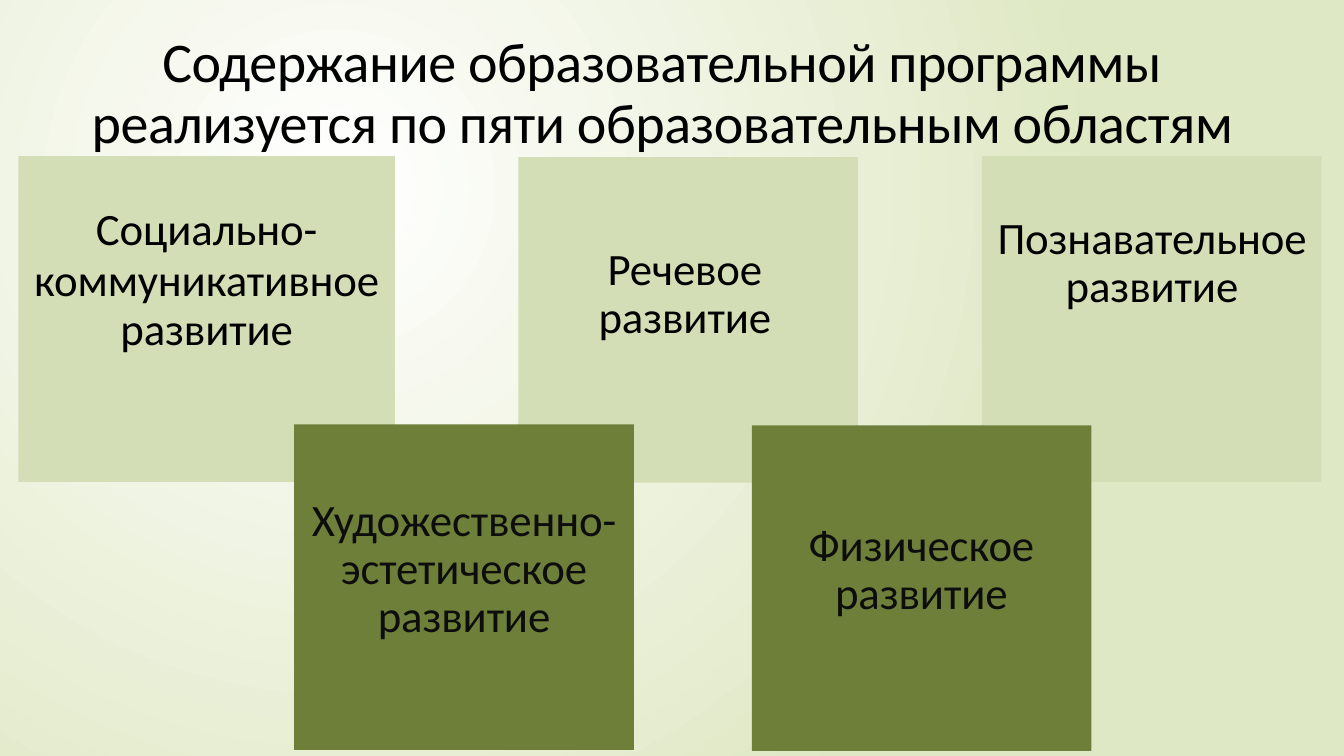
from lxml.etree import SubElement
from pptx import Presentation
from pptx.dml.color import RGBColor
from pptx.enum.shapes import MSO_SHAPE
from pptx.enum.text import MSO_ANCHOR, PP_ALIGN
from pptx.oxml.ns import qn
from pptx.util import Pt

WHITE = RGBColor(0xFF, 0xFF, 0xFF)
PALE_GREEN = RGBColor(0xDF, 0xE8, 0xC4)
LIGHT_GREEN = RGBColor(0xD4, 0xDE, 0xB6)
DARK_GREEN = RGBColor(0x6D, 0x7F, 0x39)
BLACK = RGBColor(0x00, 0x00, 0x00)
NEAR_BLACK = RGBColor(0x0D, 0x0D, 0x0D)


def prepare_frame(frame, top_inset):
    frame.word_wrap = True
    frame.vertical_anchor = MSO_ANCHOR.TOP
    frame.margin_left = frame.margin_right = frame.margin_bottom = 0
    frame.margin_top = Pt(top_inset)


def format_paragraph(paragraph, size, color, line, before, tracking):
    paragraph.line_spacing = Pt(line)
    paragraph.space_before = Pt(before)
    for run in paragraph.runs:
        run.font.name = "Calibri"
        run.font.size = Pt(size)
        run.font.bold = False
        run.font.color.rgb = color
        run._r.get_or_add_rPr().set("spc", str(tracking))


prs = Presentation()
prs.slide_width = Pt(960)
prs.slide_height = Pt(540)
slide = prs.slides.add_slide(prs.slide_layouts[5])

# Background: circular glow from the upper left
background = slide.background.fill
background.gradient()
for stop, color, position in zip(background.gradient_stops, (WHITE, PALE_GREEN), (0, 1)):
    stop.color.rgb = color
    stop.position = position
gradient = slide.background._cSld.find(".//" + qn("a:gradFill"))
gradient.remove(gradient.find(qn("a:lin")))
glow = SubElement(gradient, qn("a:path"), {"path": "circle"})
SubElement(glow, qn("a:fillToRect"),
           {"l": "50000", "t": "50000", "r": "100000", "b": "100000"})

# Title, with its first line indented
title = slide.shapes.title
title.left, title.top, title.width, title.height = Pt(54), Pt(17.3), Pt(864), Pt(93.6)
prepare_frame(title.text_frame, 6.5)
title.text_frame.text = ("Содержание образовательной программы "
                         "реализуется по пяти образовательным областям")
heading = title.text_frame.paragraphs[0]
heading.alignment = PP_ALIGN.LEFT
format_paragraph(heading, 40, BLACK, 43.2, 6.4, -30)
indents = heading._p.get_or_add_pPr()
indents.set("marL", str(Pt(11.5)))
indents.set("indent", str(Pt(50.4)))

# Five areas: card left, top, width; text left, top, width, height, inset;
# then paragraphs as text, line spacing, space before
CARD_WIDTH, CARD_HEIGHT = 242.6, 232.6
upper_row = [
    (701.3, 111.6, CARD_WIDTH, 710.6, 148.3, 224.6, 74.9, 5,
     [("Познавательное развитие", 34.6, 5.3)]),
    (13.2, 111.6, 268.8, 22.3, 144, 250.6, 109.4, 1,
     [("Социально-", 36.5, 1.1), ("коммуникативное развитие", 34.6, 2.4)]),
    (370.3, 112.2, CARD_WIDTH, 426.2, 170.6, 126, 74.9, 5,
     [("Речевое развитие", 34.6, 5.3)]),
]
lower_row = [
    (210.2, 303.1, CARD_WIDTH, 221, 349.9, 221, 109.4, 5,
     [("Художественно- эстетическое", 34.6, 5.3), ("развитие", 34, 0)]),
    (537.1, 303.8, CARD_WIDTH, 576, 367.9, 164.2, 76.3, 5,
     [("Физическое развитие", 34.6, 5.3)]),
]

for areas, card_color, text_color in ((upper_row, LIGHT_GREEN, BLACK),
                                      (lower_row, DARK_GREEN, NEAR_BLACK)):
    for left, top, width, text_left, text_top, text_width, text_height, inset, lines in areas:
        card = slide.shapes.add_shape(MSO_SHAPE.RECTANGLE, Pt(left), Pt(top),
                                      Pt(width), Pt(CARD_HEIGHT))
        card.shadow.inherit = False
        card.fill.solid()
        card.fill.fore_color.rgb = card_color
        card.line.fill.background()

        area_name = slide.shapes.add_textbox(Pt(text_left), Pt(text_top),
                                             Pt(text_width), Pt(text_height))
        frame = area_name.text_frame
        prepare_frame(frame, inset)
        frame.text = "\n".join(text for text, _, _ in lines)
        for paragraph, (_, line, before) in zip(frame.paragraphs, lines):
            paragraph.alignment = PP_ALIGN.CENTER
            format_paragraph(paragraph, 32, text_color, line, before, -10)

prs.save("out.pptx")
